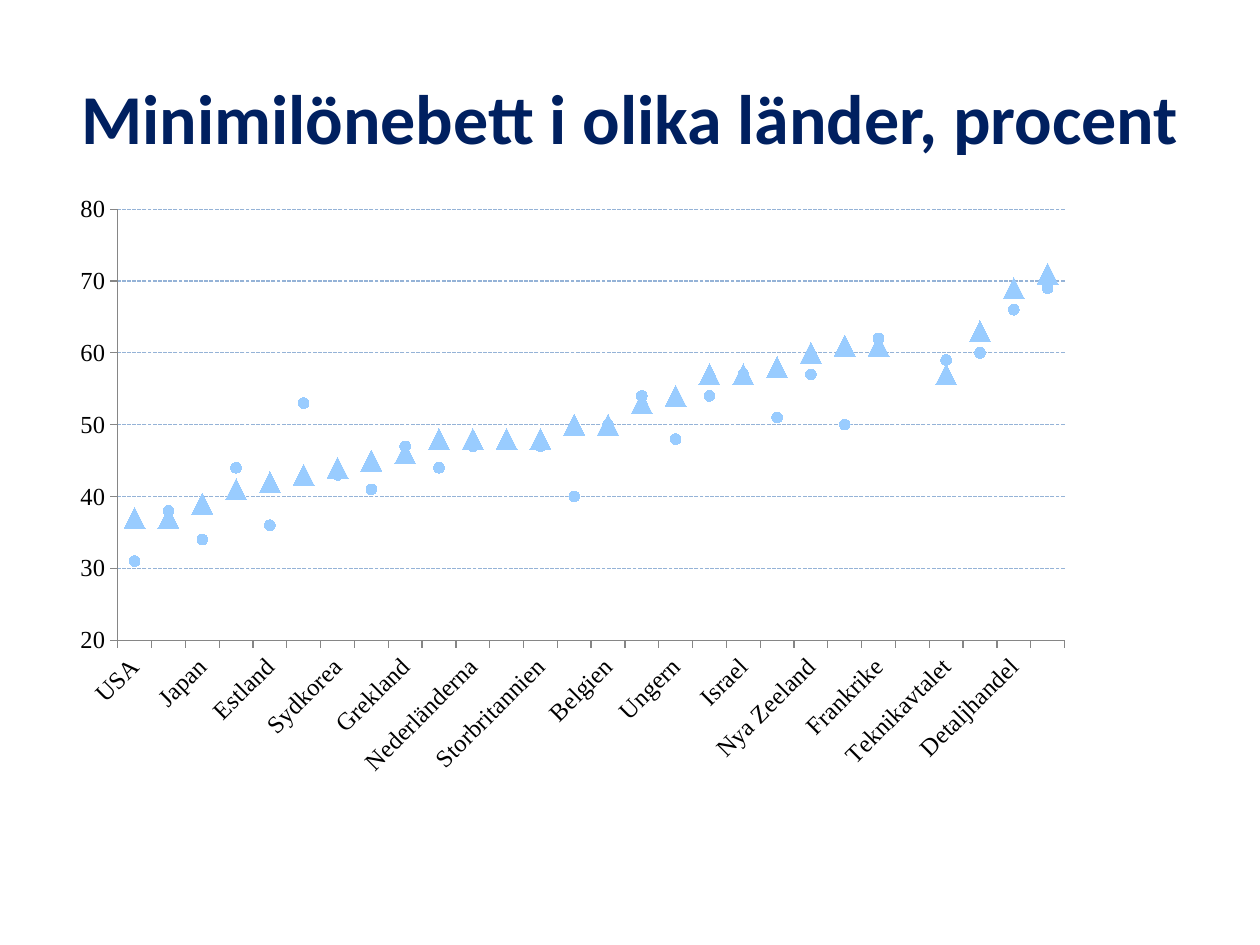
import pptx
import pptx.chart.data
import pptx.dml.color
import pptx.enum.chart
import pptx.enum.dml
import pptx.enum.text
import pptx.oxml
import pptx.oxml.ns
import pptx.util

Pt = pptx.util.Pt
RGBColor = pptx.dml.color.RGBColor
MarkerStyle = pptx.enum.chart.XL_MARKER_STYLE

NAVY = RGBColor(0x00, 0x20, 0x60)
BLACK = RGBColor(0x00, 0x00, 0x00)
SKY = RGBColor(0x99, 0xCC, 0xFF)
GRID_BLUE = RGBColor(0x95, 0xB3, 0xD7)
AXIS_GREY = RGBColor(0x86, 0x86, 0x86)

COUNTRIES = [
    "USA", "Tjeckien", "Japan", "Spanien", "Estland", "Irland", "Sydkorea",
    "Kanada", "Grekland", "Slovakien", "Nederländerna", "Tyskland",
    "Storbritannien", "Polen", "Belgien", "Australien", "Ungern", "Luxemburg",
    "Israel", "Portugal", "Nya Zeeland", "Slovenien", "Frankrike", "",
    "Teknikavtalet", "HÖK", "Detaljhandel", "HoR",
]
MINIMUM_WAGE_BITE = {
    "2007": [31, 38, 34, 44, 36, 53, 43, 41, 47, 44, 47, None, 47, 40,
             50, 54, 48, 54, 57, 51, 57, 50, 62, None, 59, 60, 66, 69],
    "2014": [37, 37, 39, 41, 42, 43, 44, 45, 46, 48, 48, 48, 48, 50,
             50, 53, 54, 57, 57, 58, 60, 61, 61, None, 57, 63, 69, 71],
}
MARKERS = [(MarkerStyle.CIRCLE, 6), (MarkerStyle.TRIANGLE, 12)]
PLOT_LAYOUT = {"x": 0.07, "y": 0.05, "w": 0.9, "h": 0.63}


def add_title(slide, left, top, width, height):
    """Place the centred slide title in the given box."""
    text_frame = slide.shapes.add_textbox(left, top, width, height).text_frame
    text_frame.word_wrap = True
    text_frame.vertical_anchor = pptx.enum.text.MSO_ANCHOR.MIDDLE
    paragraph = text_frame.paragraphs[0]
    paragraph.alignment = pptx.enum.text.PP_ALIGN.CENTER
    run = paragraph.add_run()
    run.text = "Minimilönebett i olika länder, procent"
    run.font.name = "Calibri"
    run.font.size = Pt(40)
    run.font.bold = True
    run.font.color.rgb = NAVY


def set_plot_layout(chart):
    """Fix the inner plot area as fractions of the chart box."""
    plot_area = chart.plots[0]._element.getparent()
    for layout in plot_area.findall(pptx.oxml.ns.qn("c:layout")):
        plot_area.remove(layout)
    sizes = "".join(f'<c:{key} val="{value}"/>' for key, value in PLOT_LAYOUT.items())
    plot_area.insert(0, pptx.oxml.parse_xml(
        f'<c:layout {pptx.oxml.ns.nsdecls("c")}><c:manualLayout>'
        '<c:layoutTarget val="inner"/><c:xMode val="edge"/><c:yMode val="edge"/>'
        f'{sizes}</c:manualLayout></c:layout>'))


def style_axes(chart):
    """Set scale, tick labels, axis lines and gridlines."""
    for axis in (chart.category_axis, chart.value_axis):
        axis.major_tick_mark = pptx.enum.chart.XL_TICK_MARK.OUTSIDE
        axis.tick_labels.font.size = Pt(14)
        axis.format.line.color.rgb = AXIS_GREY
        axis.format.line.width = Pt(0.75)

    category_axis = chart.category_axis
    category_axis.tick_labels.font.color.rgb = BLACK
    text_body = category_axis._element.find(pptx.oxml.ns.qn("c:txPr"))
    text_body.find(pptx.oxml.ns.qn("a:bodyPr")).set("rot", "-2700000")
    category_axis._element.find(pptx.oxml.ns.qn("c:noMultiLvlLbl")).addprevious(
        pptx.oxml.parse_xml(f'<c:tickLblSkip {pptx.oxml.ns.nsdecls("c")} val="2"/>'))

    value_axis = chart.value_axis
    value_axis.minimum_scale = 20
    value_axis.maximum_scale = 80
    value_axis.major_unit = 10
    value_axis.tick_labels.number_format = "0"
    value_axis.tick_labels.number_format_is_linked = False
    grid_line = value_axis.major_gridlines.format.line
    grid_line.color.rgb = GRID_BLUE
    grid_line.width = Pt(0.75)
    grid_line.dash_style = pptx.enum.dml.MSO_LINE.SQUARE_DOT


def add_wage_chart(slide, left, top, width, height):
    """Place the marker chart of minimum wage bites in the given box."""
    chart_data = pptx.chart.data.CategoryChartData(number_format="0")
    chart_data.categories = COUNTRIES
    for year, values in MINIMUM_WAGE_BITE.items():
        chart_data.add_series(year, values)
    chart = slide.shapes.add_chart(
        pptx.enum.chart.XL_CHART_TYPE.LINE_MARKERS,
        left, top, width, height, chart_data).chart
    chart.has_title = False
    chart.has_legend = False
    chart.font.name = "Times New Roman"
    chart.font.size = Pt(9)
    chart.font.color.rgb = BLACK
    chart.plots[0].vary_by_categories = False
    for series, (style, size) in zip(chart.plots[0].series, MARKERS):
        series.smooth = False
        series.format.line.fill.background()
        series.marker.style = style
        series.marker.size = size
        series.marker.format.fill.solid()
        series.marker.format.fill.fore_color.rgb = SKY
        series.marker.format.line.fill.background()
    style_axes(chart)
    set_plot_layout(chart)


def main():
    """Build and save the presentation."""
    presentation = pptx.Presentation()
    presentation.slide_width = Pt(720)
    presentation.slide_height = Pt(540)
    slide = presentation.slides.add_slide(presentation.slide_layouts[6])
    add_title(slide, Pt(36), Pt(21.6), Pt(648), Pt(90))
    add_wage_chart(slide, Pt(25.2), Pt(100), Pt(601.2), Pt(391))
    presentation.save("out.pptx")


if __name__ == "__main__":
    main()
